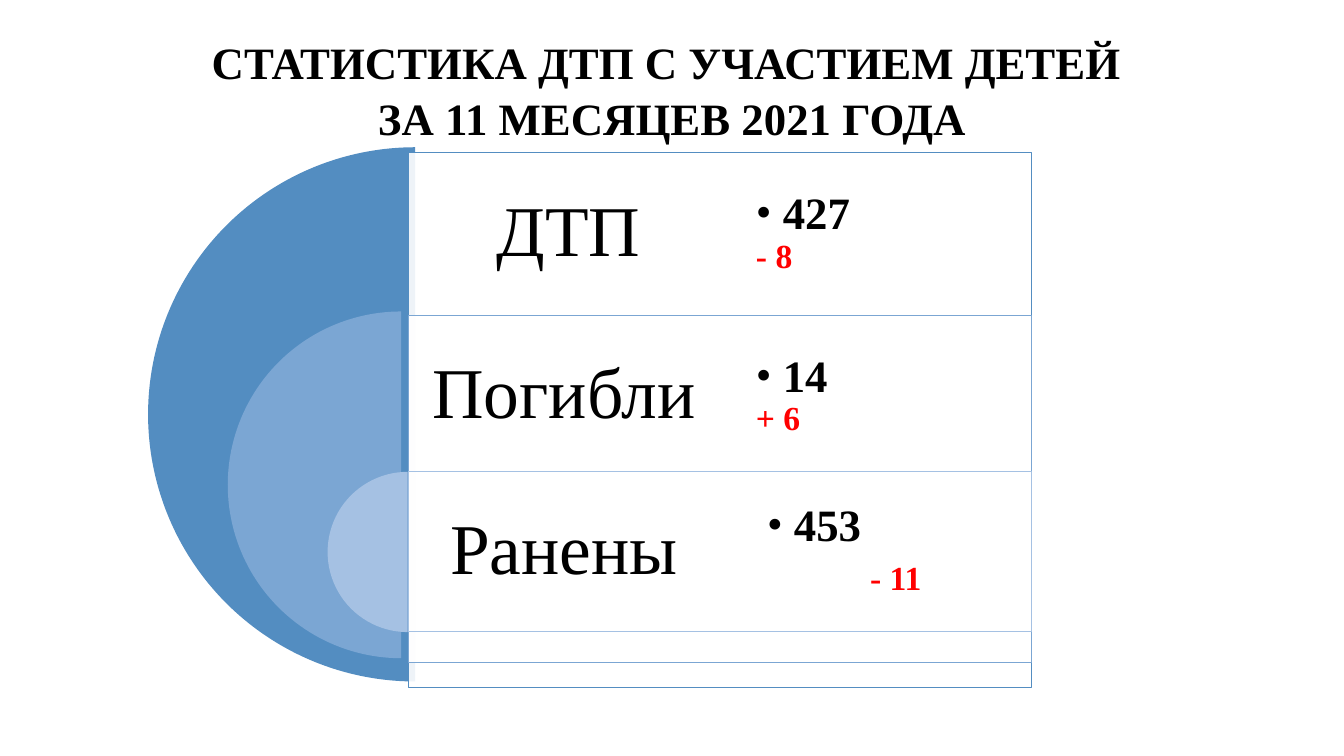
"""Build a slide with child road accident statistics for 11 months of 2021."""
import pptx
import pptx.dml.color
import pptx.enum.shapes
import pptx.enum.text
import pptx.oxml
import pptx.oxml.ns
import pptx.util

Pt = pptx.util.Pt
RGB = pptx.dml.color.RGBColor.from_string
SHAPES = pptx.enum.shapes.MSO_SHAPE
CENTER = pptx.enum.text.PP_ALIGN.CENTER
MIDDLE = pptx.enum.text.MSO_ANCHOR.MIDDLE
COLORS = {
    "text": "000000", "change": "FF0000", "panel": "FFFFFF",
    "accidents": "538DC1", "killed": "7BA6D3", "injured": "A5C1E3",
}


def add_child(parent, tag, attributes):
    xml = f'<a:{tag} {pptx.oxml.ns.nsdecls("a")} {attributes}/>'
    child = pptx.oxml.parse_xml(xml)
    parent.append(child)
    return child


def add_run(paragraph, text, size, color="text", bold=True):
    run = paragraph.add_run()
    run.text = text
    run.font.name = "Times New Roman"
    run.font.size = Pt(size)
    run.font.bold = bold
    run.font.color.rgb = RGB(COLORS[color])


deck = pptx.Presentation()
deck.slide_width, deck.slide_height = Pt(960), Pt(540)
slide = deck.slides.add_slide(deck.slide_layouts[6])
shapes = slide.shapes

title = shapes.add_textbox(Pt(0), Pt(19), Pt(960), Pt(85)).text_frame
title.word_wrap = True
heading_lines = ["СТАТИСТИКА ДТП С УЧАСТИЕМ ДЕТЕЙ ", "ЗА 11 МЕСЯЦЕВ 2021 ГОДА"]
for index, heading in enumerate(heading_lines):
    line = title.add_paragraph() if index else title.paragraphs[0]
    line.alignment = CENTER
    line.line_spacing = 1.05
    add_run(line, heading, 32)

panel_left, panel_width, row_height = 291.6, 445, 114.5
column_width = panel_width / 2
rows = [
    ("accidents", "ДТП", "427", "- 8", 105.8, 105.2, 381.6, 109.1, 381.6, 6.5, 0),
    ("killed", "Погибли", "14", "+ 6", 162.7, 222.5, 247.7, 225.4, 247.7, 6.5, 0),
    ("injured", "Ранены", "453", "- 11", 234, 337, 114.5, 336.6, 114.5, 0, 14.4),
]
for (color, label, count, change, arc_left, arc_top, diameter,
     panel_top, panel_height, margin, indent) in rows:
    arc = shapes.add_shape(SHAPES.PIE, Pt(arc_left), Pt(arc_top), Pt(diameter), Pt(diameter))
    arc.adjustments[0], arc.adjustments[1] = 54, 162
    arc.shadow.inherit = False
    arc.fill.solid()
    arc.fill.fore_color.rgb = RGB(COLORS[color])
    arc.line.fill.background()

    panel = shapes.add_shape(
        SHAPES.RECTANGLE, Pt(panel_left), Pt(panel_top), Pt(panel_width), Pt(panel_height))
    panel.shadow.inherit = False
    panel.fill.solid()
    panel.fill.fore_color.rgb = RGB(COLORS["panel"])
    panel_color = panel._element.spPr.find(".//" + pptx.oxml.ns.qn("a:srgbClr"))
    add_child(panel_color, "alpha", 'val="90000"')
    panel.line.color.rgb = RGB(COLORS[color])
    panel.line.width = Pt(0.5)

    cells = []
    for column, inset in enumerate((15.1, 19.4)):
        cell = shapes.add_textbox(
            Pt(panel_left + column * column_width), Pt(panel_top),
            Pt(column_width), Pt(row_height)).text_frame
        cell.word_wrap = True
        cell.vertical_anchor = MIDDLE
        cell.margin_left = cell.margin_right = Pt(inset)
        cell.margin_top = cell.margin_bottom = Pt(inset)
        cells.append(cell.paragraphs[0])

    name, figures = cells
    name.alignment = CENTER
    name.line_spacing = 0.9
    if color == "accidents":
        name._p.get_or_add_pPr().set("marL", str(Pt(6.5)))
    add_run(name, label, 51, bold=False)

    properties = figures._p.get_or_add_pPr()
    properties.set("marL", str(Pt(margin)))
    properties.set("indent", str(Pt(indent)))
    add_child(properties, "buFont", 'typeface="Times New Roman"')
    add_child(properties, "buChar", 'char="•"')
    if indent:
        tabs = add_child(properties, "tabLst", "")
        add_child(tabs, "tab", f'pos="{Pt(88)}" algn="l"')
    figures.line_spacing = 0.9
    add_run(figures, f" {count}", 32)
    figures.add_line_break()
    if indent:
        add_run(figures, "\t", 32)
    add_run(figures, change, 24, "change")

deck.save("out.pptx")
